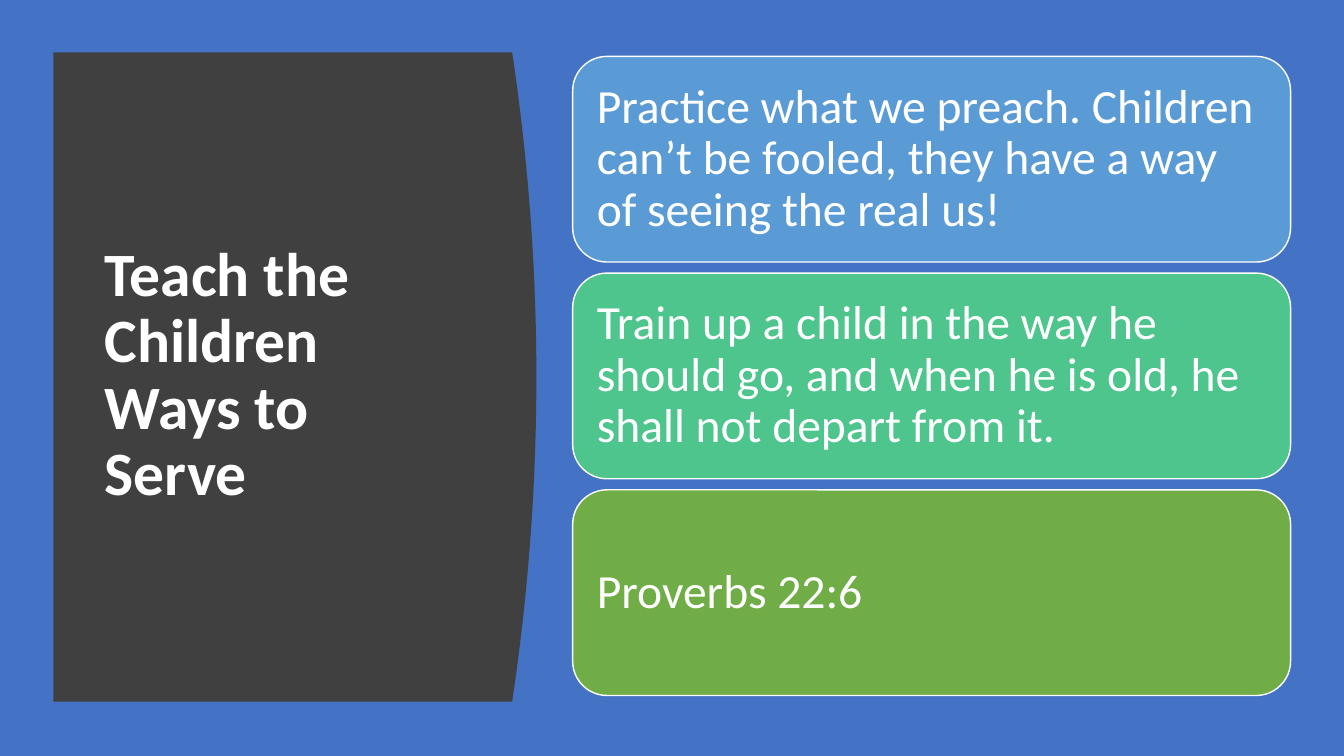
"""Build the slide on teaching children ways to serve."""
from dataclasses import dataclass

import pptx
import pptx.dml.color
import pptx.enum.shapes
import pptx.enum.text
import pptx.util

Inches = pptx.util.Inches


@dataclass(frozen=True)
class Theme:
    font: str = "Calibri"
    background: str = "4472C4"
    panel: str = "404040"
    text: str = "FFFFFF"
    title_size: int = 44
    card_size: int = 34
    line_spacing: float = 0.9


@dataclass(frozen=True)
class Card:
    text: str
    color: str


THEME = Theme()
CARDS = (
    Card("Practice what we preach. Children can’t be fooled, "
         "they have a way of seeing the real us!", "5B9BD5"),
    Card("Train up a child in the way he should go, "
         "and when he is old, he shall not depart from it.", "4DC58D"),
    Card("Proverbs 22:6", "70AD47"),
)
CARD_LEFT, CARD_TOP, CARD_WIDTH, CARD_HEIGHT = 5.68, 0.56, 7.12, 2.04
CARD_PITCH = 2.15
CARD_INSET = 0.14
PANEL_LEFT, PANEL_TOP, PANEL_BOTTOM = 0.53, 0.52, 6.96
PANEL_CORNER, PANEL_BULGE = 5.08, 0.24
CURVE_STEPS = 40


def rgb(color: str) -> pptx.dml.color.RGBColor:
    return pptx.dml.color.RGBColor.from_string(color)


def write_text(tf: pptx.text.text.TextFrame, text: str, size: int,
               bold: bool = False) -> None:
    tf.word_wrap = True
    tf.vertical_anchor = pptx.enum.text.MSO_ANCHOR.MIDDLE
    p = tf.paragraphs[0]
    p.alignment = pptx.enum.text.PP_ALIGN.LEFT
    p.line_spacing = THEME.line_spacing
    r = p.add_run()
    r.text = text
    r.font.name = THEME.font
    r.font.size = pptx.util.Pt(size)
    r.font.bold = bold
    r.font.color.rgb = rgb(THEME.text)


def add_panel(s: pptx.slide.Slide) -> None:
    middle = (PANEL_TOP + PANEL_BOTTOM) / 2
    half = (PANEL_BOTTOM - PANEL_TOP) / 2
    offsets = [2 * i / CURVE_STEPS - 1 for i in range(CURVE_STEPS + 1)]
    curve = [(Inches(PANEL_CORNER + PANEL_BULGE * (1 - u * u)),
              Inches(middle + half * u)) for u in offsets]
    builder = s.shapes.build_freeform(Inches(PANEL_LEFT), Inches(PANEL_TOP))
    builder.add_line_segments(
        [*curve, (Inches(PANEL_LEFT), Inches(PANEL_BOTTOM))], close=True)
    sp = builder.convert_to_shape()
    sp.shadow.inherit = False
    sp.fill.solid()
    sp.fill.fore_color.rgb = rgb(THEME.panel)
    sp.line.fill.background()


def add_title(s: pptx.slide.Slide) -> None:
    sp = s.shapes.add_textbox(Inches(0.94), Inches(1.11), Inches(3.7), Inches(5.24))
    write_text(sp.text_frame, "Teach the Children Ways to Serve",
               THEME.title_size, bold=True)


def add_card(s: pptx.slide.Slide, card: Card, top: float) -> None:
    sp = s.shapes.add_shape(
        pptx.enum.shapes.MSO_SHAPE.ROUNDED_RECTANGLE, Inches(CARD_LEFT),
        Inches(top), Inches(CARD_WIDTH), Inches(CARD_HEIGHT))
    sp.shadow.inherit = False
    sp.fill.solid()
    sp.fill.fore_color.rgb = rgb(card.color)
    sp.line.color.rgb = rgb(THEME.text)
    sp.line.width = pptx.util.Pt(1)
    tf = sp.text_frame
    tf.margin_left = tf.margin_right = Inches(CARD_INSET)
    tf.margin_top = tf.margin_bottom = Inches(CARD_INSET)
    write_text(tf, card.text, THEME.card_size)


def main() -> None:
    prs = pptx.Presentation()
    prs.slide_width, prs.slide_height = Inches(13.33), Inches(7.5)
    s = prs.slides.add_slide(prs.slide_layouts[6])
    s.background.fill.solid()
    s.background.fill.fore_color.rgb = rgb(THEME.background)
    add_panel(s)
    add_title(s)
    for i, card in enumerate(CARDS):
        add_card(s, card, CARD_TOP + i * CARD_PITCH)
    prs.save("out.pptx")


if __name__ == "__main__":
    main()
